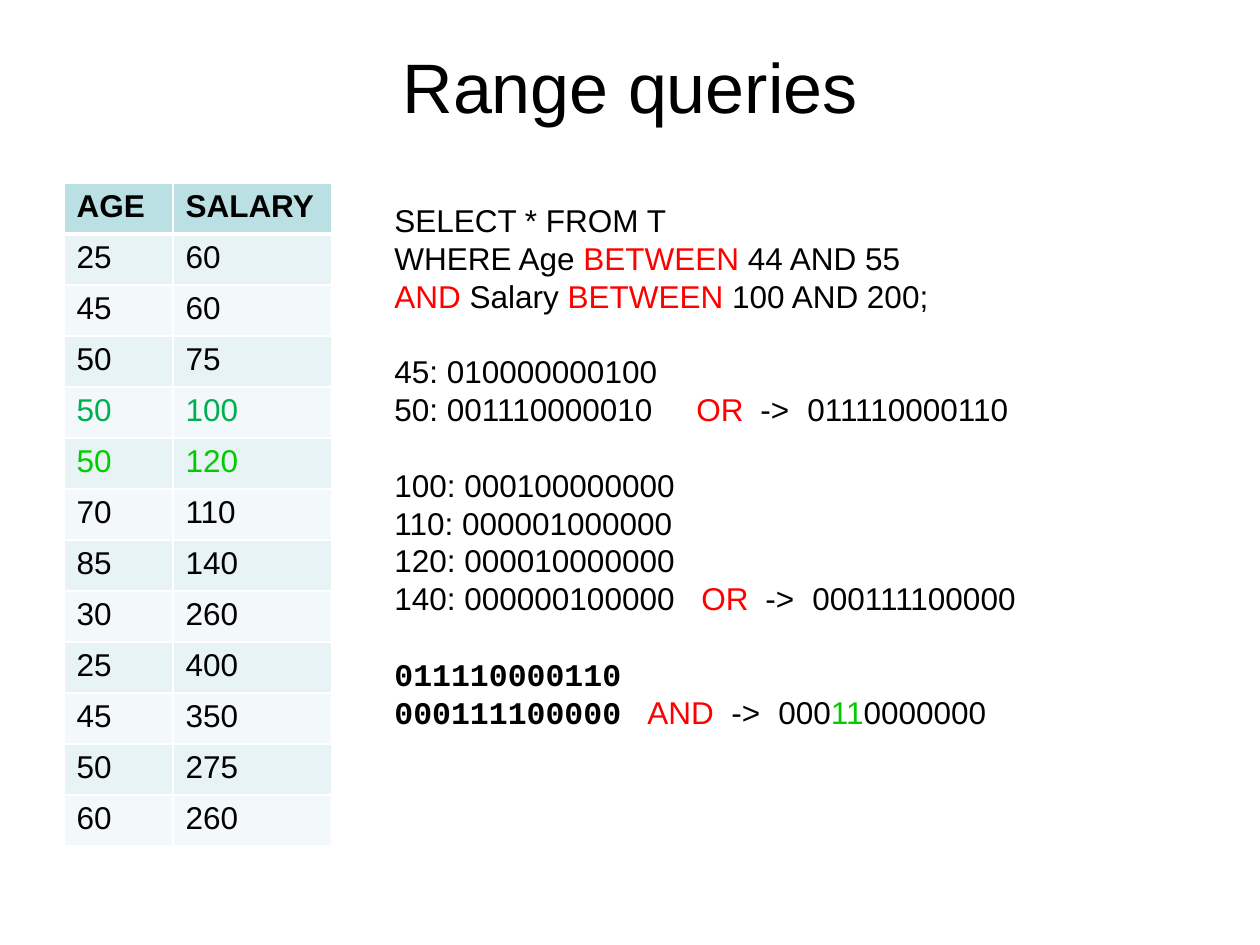
import pptx
import pptx.dml.color
import pptx.enum.text
import pptx.oxml.ns
import pptx.util
from dataclasses import dataclass
from lxml import etree

PX = 914400 // 126  # EMU in one px


@dataclass(frozen=True)
class Theme:
    font: str = "Arial"
    mono: str = "Courier New"
    title_size: int = 40
    body_size: int = 18
    line_pitch: float = 21.6
    ink: str = "000000"
    operator: str = "FF0000"
    match: str = "00CC00"
    first_match: str = "00B050"
    header_fill: str = "BBE0E3"
    bands: tuple = ("E7F3F4", "F3F9FA")
    rule: str = "FFFFFF"


THEME = Theme()


def add_xml(parent, tag, **attributes):
    return etree.SubElement(parent, pptx.oxml.ns.qn(tag), attributes)


class SlideBuilder:
    def __init__(self, slide, theme):
        self.slide = slide
        self.theme = theme

    def run(self, paragraph, text, size=None, color=None, bold=False, font=None):
        run = paragraph.add_run()
        run.text = text
        run.font.name = font or self.theme.font
        run.font.size = pptx.util.Pt(size or self.theme.body_size)
        run.font.bold = bold
        run.font.color.rgb = pptx.dml.color.RGBColor.from_string(color or self.theme.ink)

    def text_frame(self, left, top, width, height):
        box = self.slide.shapes.add_textbox(*(n * PX for n in (left, top, width, height)))
        box.text_frame.word_wrap = True
        return box.text_frame

    def title(self, text, *place):
        frame = self.text_frame(*place)
        frame.vertical_anchor = pptx.enum.text.MSO_ANCHOR.MIDDLE
        heading = frame.paragraphs[0]
        heading.alignment = pptx.enum.text.PP_ALIGN.CENTER
        self.run(heading, text, size=self.theme.title_size)

    def text_groups(self, groups, *place):
        """Groups of lines, one line pitch apart; a line is (runs, tab stops)."""
        frame = self.text_frame(*place)
        pitch = pptx.util.Pt(self.theme.line_pitch)
        paragraph = None
        for group in groups:
            for index, (runs, stops) in enumerate(group):
                starts_gap = paragraph is not None and index == 0
                paragraph = frame.paragraphs[0] if paragraph is None else frame.add_paragraph()
                paragraph.line_spacing = pitch
                paragraph.space_before = pitch if starts_gap else 0
                if stops:
                    tabs = add_xml(paragraph._p.get_or_add_pPr(), "a:tabLst")
                    for stop in stops:
                        add_xml(tabs, "a:tab", pos=str(stop * PX), algn="l")
                for text, style in runs:
                    self.run(paragraph, text, **style)

    def cell_borders(self, cell, bottom):
        properties = cell._tc.get_or_add_tcPr()
        for side, points in (("L", 1), ("R", 1), ("T", 1), ("B", bottom)):
            line = add_xml(properties, f"a:ln{side}", w=str(pptx.util.Pt(points)))
            add_xml(add_xml(line, "a:solidFill"), "a:srgbClr", val=self.theme.rule)

    def table(self, header, records, row_colors, left, top, widths, row_height):
        rows = [header, *records]
        table = self.slide.shapes.add_table(
            len(rows), len(header), left * PX, top * PX,
            sum(widths) * PX, len(rows) * row_height * PX).table
        table.first_row = table.horz_banding = False
        for column, width in zip(table.columns, widths):
            column.width = width * PX
        for r, values in enumerate(rows):
            table.rows[r].height = row_height * PX
            is_header = r == 0
            fill = self.theme.header_fill if is_header else self.theme.bands[(r - 1) % 2]
            for c, value in enumerate(values):
                cell = table.cell(r, c)
                self.cell_borders(cell, bottom=3 if is_header else 1)
                cell.fill.solid()
                cell.fill.fore_color.rgb = pptx.dml.color.RGBColor.from_string(fill)
                self.run(cell.text_frame.paragraphs[0], str(value),
                         color=row_colors.get(values), bold=is_header)


PLAIN = {}
RED = {"color": THEME.operator}
GREEN = {"color": THEME.match}
MONO = {"font": THEME.mono, "bold": True}


def line(text, style=PLAIN):
    return [(text, style)], ()


def combine(operand, operator, result, start, arrow, style=PLAIN):
    """Operand, red operator and arrow to the result, set on tab stops."""
    runs = [(operand + "\t", style), (operator, RED), ("\t->\t", PLAIN), *result]
    return runs, (start, arrow, arrow + 47)


RECORDS = [(25, 60), (45, 60), (50, 75), (50, 100), (50, 120), (70, 110),
           (85, 140), (30, 260), (25, 400), (45, 350), (50, 275), (60, 260)]
MATCHES = {(50, 100): THEME.first_match, (50, 120): THEME.match}

QUERY = [
    line("SELECT * FROM T"),
    ([("WHERE Age ", PLAIN), ("BETWEEN", RED), (" 44 AND 55", PLAIN)], ()),
    ([("AND", RED), (" Salary ", PLAIN), ("BETWEEN", RED), (" 100 AND 200;", PLAIN)], ()),
]
AGE_BITMAPS = [
    line("45: 010000000100"),
    combine("50: 001110000010", "OR", [("011110000110", PLAIN)], 302, 366),
]
SALARY_BITMAPS = [
    line("100: 000100000000"),
    line("110: 000001000000"),
    line("120: 000010000000"),
    combine("140: 000000100000", "OR", [("000111100000", PLAIN)], 307, 371),
]
INTERSECTION = [
    line("011110000110", MONO),
    combine("000111100000", "AND",
            [("000", PLAIN), ("11", GREEN), ("0000000", PLAIN)], 253, 337, MONO),
]


def main():
    deck = pptx.Presentation()
    deck.slide_width, deck.slide_height = 1260 * PX, 945 * PX
    builder = SlideBuilder(deck.slides.add_slide(deck.slide_layouts[6]), THEME)

    # Heading
    builder.title("Range queries", 63, 38, 1134, 94)

    # Table T
    builder.table(("AGE", "SALARY"), RECORDS, MATCHES, 64, 183, (109, 159), 51)

    # Query and bitmap evaluation
    builder.text_groups([QUERY, AGE_BITMAPS, SALARY_BITMAPS, INTERSECTION],
                        382, 195, 764, 661)

    deck.save("out.pptx")


if __name__ == "__main__":
    main()
